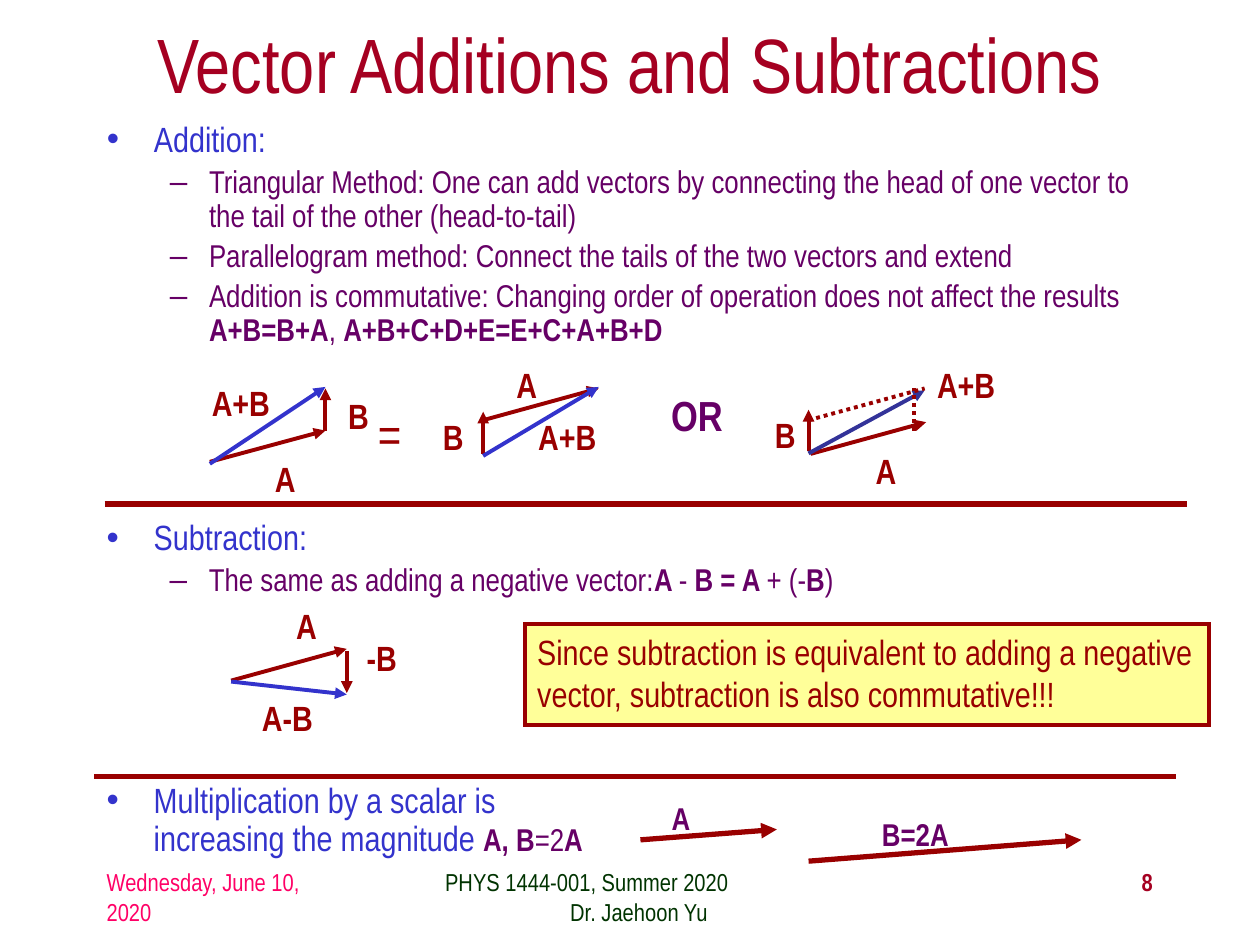
from dataclasses import dataclass
from typing import Optional

import pptx
import pptx.dml.color
import pptx.enum.dml
import pptx.enum.shapes
import pptx.enum.text
import pptx.oxml.ns
import pptx.util
from pptx.dml.color import RGBColor
from pptx.util import Cm

DARK_RED = RGBColor(0x99, 0x00, 0x00)
CRIMSON = RGBColor(0xA5, 0x00, 0x21)
BLUE = RGBColor(0x33, 0x33, 0xCC)
NAVY = RGBColor(0x33, 0x33, 0x99)
PURPLE = RGBColor(0x66, 0x00, 0x66)
PINK = RGBColor(0xFF, 0x00, 0x66)
GREEN = RGBColor(0x00, 0x33, 0x00)
YELLOW = RGBColor(0xFF, 0xFF, 0x99)
FONT = "Arial Narrow"
ALIGN = pptx.enum.text.PP_ALIGN
DASH = pptx.enum.dml.MSO_LINE.ROUND_DOT


@dataclass(frozen=True)
class Level:
    size: float
    color: RGBColor
    bullet: str
    margin: float
    hanging: float


@dataclass(frozen=True)
class Run:
    text: str
    bold: bool = False
    style: Optional[Level] = None


@dataclass(frozen=True)
class Item:
    level: int
    runs: tuple


@dataclass(frozen=True)
class Label:
    text: str
    left: float
    top: float
    width: float = 0.94
    size: float = 20
    color: RGBColor = DARK_RED
    bold: bool = True


@dataclass(frozen=True)
class Line:
    start: tuple
    end: tuple
    color: RGBColor = DARK_RED
    width: float = 2.25
    arrow: bool = True
    dotted: bool = False


@dataclass(frozen=True)
class FooterLine:
    text: str
    left_margin: float = 0
    right_margin: float = 0


@dataclass(frozen=True)
class Footer:
    lines: tuple
    left: float
    width: float
    color: RGBColor
    align: ALIGN
    bold: bool = False


LEVELS = (Level(20, BLUE, "•", 0.95, 0.95), Level(18, PURPLE, "–", 2.06, 0.79))
ADDITION = (
    Item(0, (Run("Addition:"),)),
    Item(1, (Run("Triangular Method: One can add vectors by connecting the head "
                 "of one vector to the tail of the other (head-to-tail)"),)),
    Item(1, (Run("Parallelogram method: Connect the tails of the two vectors and extend"),)),
    Item(1, (Run("Addition is commutative: Changing order of operation does not "
                 "affect the results "),
             Run("A+B=B+A", True), Run(", "), Run("A+B+C+D+E=E+C+A+B+D", True))),
)
SUBTRACTION = (
    Item(0, (Run("Subtraction:"),)),
    Item(1, (Run("The same as adding a negative vector:"), Run("A ", True), Run("- "),
             Run("B = A ", True), Run("+ (-"), Run("B", True), Run(")"))),
)
MULTIPLICATION = (
    Item(0, (Run("Multiplication by a scalar is increasing the magnitude "),
             Run("A, B", True, LEVELS[1]), Run("=2", False, LEVELS[1]),
             Run("A", True, LEVELS[1]))),
)
LINES = (
    Line((4.23, 9.31), (6.56, 8.68)),
    Line((6.56, 8.68), (6.56, 7.83)),
    Line((4.23, 9.35), (6.56, 7.8), BLUE),
    Line((9.74, 8.47), (12.07, 7.83)),
    Line((9.74, 9.15), (9.74, 8.3)),
    Line((9.74, 9.19), (12.07, 7.8), BLUE),
    Line((16.34, 9.15), (18.67, 8.51)),
    Line((16.3, 9.1), (16.3, 8.26)),
    Line((16.3, 9.14), (18.64, 7.87), NAVY),
    Line((18.42, 8.68), (18.42, 7.83), arrow=False, dotted=True),
    Line((16.3, 8.47), (18.64, 7.83), arrow=False, dotted=True),
    Line((4.66, 13.72), (6.99, 13.08)),
    Line((6.99, 13.12), (6.99, 13.97)),
    Line((4.66, 13.74), (6.99, 14), BLUE),
    Line((2.11, 10.16), (23.92, 10.16), width=3, arrow=False),
    Line((1.9, 15.66), (23.71, 15.66), width=3, arrow=False),
    Line((12.91, 16.93), (15.66, 16.72), width=3),
    Line((16.3, 17.36), (21.8, 16.93), width=3),
)
LABELS = (
    Label("A", 5.29, 9.1), Label("B", 6.77, 7.83), Label("A+B", 4.02, 7.57, 1.68),
    Label("=", 7.37, 8, 0.99, 28, bold=False),
    Label("A", 10.16, 7.2), Label("B", 8.68, 8.26), Label("A+B", 10.6, 8.26, 1.68),
    Label("OR", 13.28, 7.72, 1.55, 24, PURPLE),
    Label("A", 17.4, 8.94), Label("B", 15.37, 8.21), Label("A+B", 18.64, 7.2, 1.68),
    Label("A", 5.72, 12.07), Label("-B", 7.14, 12.7, 1.12), Label("A-B", 5.03, 13.92, 1.55),
    Label("A", 13.29, 15.98, 0.89, 18, PURPLE),
    Label("B=2A", 17.53, 16.3, 1.85, 18, PURPLE),
)
FOOTERS = (
    Footer((FooterLine("Wednesday, June 10, 2020"),), 1.9, 5.29, PINK, ALIGN.LEFT),
    Footer((FooterLine("PHYS 1444-001, Summer 2020", right_margin=1.75),
            FooterLine("Dr. Jaehoon Yu", left_margin=0.35)),
           8.68, 8.05, GREEN, ALIGN.CENTER),
    Footer((FooterLine("8"),), 18.2, 5.29, CRIMSON, ALIGN.RIGHT, True),
)


def format_run(run, size: float, color: RGBColor, bold: bool = False) -> None:
    run.font.name = FONT
    run.font.size = pptx.util.Pt(size)
    run.font.bold = bold
    run.font.color.rgb = color


def append_element(parent, tag: str, **attributes: str) -> None:
    parent.append(parent.makeelement(pptx.oxml.ns.qn(tag), attributes))


def place(shape, left: float, top: float, width: float, height: float) -> None:
    shape.left, shape.top = Cm(left), Cm(top)
    shape.width, shape.height = Cm(width), Cm(height)


def add_box(slide, left: float, top: float, width: float, height: float):
    shape = slide.shapes.add_textbox(Cm(left), Cm(top), Cm(width), Cm(height))
    shape.text_frame.word_wrap = True
    return shape


def fill_list(shape, items: tuple) -> None:
    frame = shape.text_frame
    frame.auto_size = pptx.enum.text.MSO_AUTO_SIZE.NONE
    for index, item in enumerate(items):
        level = LEVELS[item.level]
        paragraph = frame.add_paragraph() if index else frame.paragraphs[0]
        paragraph.level = item.level
        properties = paragraph._p.get_or_add_pPr()
        properties.set("marL", str(Cm(level.margin)))
        properties.set("indent", str(-Cm(level.hanging)))
        append_element(properties, "a:buFont", typeface="Arial")
        append_element(properties, "a:buChar", char=level.bullet)
        paragraph.line_spacing = 0.9
        paragraph.space_before = pptx.util.Pt(level.size * 0.2 if index else 0)
        for part in item.runs:
            run = paragraph.add_run()
            run.text = part.text
            style = part.style or level
            format_run(run, style.size, style.color, part.bold)


def add_line(slide, line: Line) -> None:
    connector = slide.shapes.add_connector(
        pptx.enum.shapes.MSO_CONNECTOR.STRAIGHT, *map(Cm, line.start + line.end))
    connector.line.color.rgb = line.color
    connector.line.width = pptx.util.Pt(line.width)
    if line.dotted:
        connector.line.dash_style = DASH
    if line.arrow:
        append_element(connector.line._get_or_add_ln(), "a:tailEnd", type="triangle")
    append_element(connector._element.spPr, "a:effectLst")


def add_label(slide, label: Label) -> None:
    frame = add_box(slide, label.left, label.top, label.width, label.size * 0.055).text_frame
    frame.word_wrap = False
    frame.text = label.text
    format_run(frame.paragraphs[0].runs[0], label.size, label.color, label.bold)


def add_footer(slide, footer: Footer) -> None:
    frame = add_box(slide, footer.left, 17.36, footer.width, 1.27).text_frame
    frame.text = "\n".join(line.text for line in footer.lines)
    for paragraph, line in zip(frame.paragraphs, footer.lines):
        paragraph.alignment = footer.align
        properties = paragraph._p.get_or_add_pPr()
        properties.set("marL", str(Cm(line.left_margin)))
        properties.set("marR", str(Cm(line.right_margin)))
        properties.set("indent", "0")
        format_run(paragraph.runs[0], 14, footer.color, footer.bold)


def add_callout(slide) -> None:
    shape = slide.shapes.add_shape(
        pptx.enum.shapes.MSO_SHAPE.RECTANGLE, Cm(10.58), Cm(12.58), Cm(13.8), Cm(2.03))
    shape.shadow.inherit = False
    shape.fill.solid()
    shape.fill.fore_color.rgb = YELLOW
    shape.line.color.rgb = DARK_RED
    shape.line.width = pptx.util.Pt(2.25)
    append_element(shape.line._get_or_add_ln(), "a:miter", lim="800000")
    frame = shape.text_frame
    frame.word_wrap = True
    frame.vertical_anchor = pptx.enum.text.MSO_ANCHOR.TOP
    frame.text = ("Since subtraction is equivalent to adding a negative vector, "
                  "subtraction is also commutative!!!")
    frame.paragraphs[0].alignment = ALIGN.LEFT
    format_run(frame.paragraphs[0].runs[0], 20, DARK_RED)


def main() -> None:
    presentation = pptx.Presentation()
    presentation.slide_width, presentation.slide_height = Cm(25.4), Cm(19.05)
    slide = presentation.slides.add_slide(presentation.slide_layouts[1])
    title, body = slide.placeholders
    place(title, 1.9, 0.42, 21.59, 1.69)
    title.text_frame.text = "Vector Additions and Subtractions"
    title.text_frame.auto_size = pptx.enum.text.MSO_AUTO_SIZE.NONE
    title.text_frame.vertical_anchor = pptx.enum.text.MSO_ANCHOR.MIDDLE
    format_run(title.text_frame.paragraphs[0].runs[0], 44, CRIMSON)
    place(body, 1.9, 2.33, 21.59, 4.66)
    fill_list(body, ADDITION)
    fill_list(add_box(slide, 1.9, 10.37, 21.59, 2.12), SUBTRACTION)
    fill_list(add_box(slide, 1.9, 15.66, 10.16, 1.69), MULTIPLICATION)
    add_callout(slide)
    for line in LINES:
        add_line(slide, line)
    for label in LABELS:
        add_label(slide, label)
    for footer in FOOTERS:
        add_footer(slide, footer)
    presentation.save("out.pptx")


if __name__ == "__main__":
    main()
